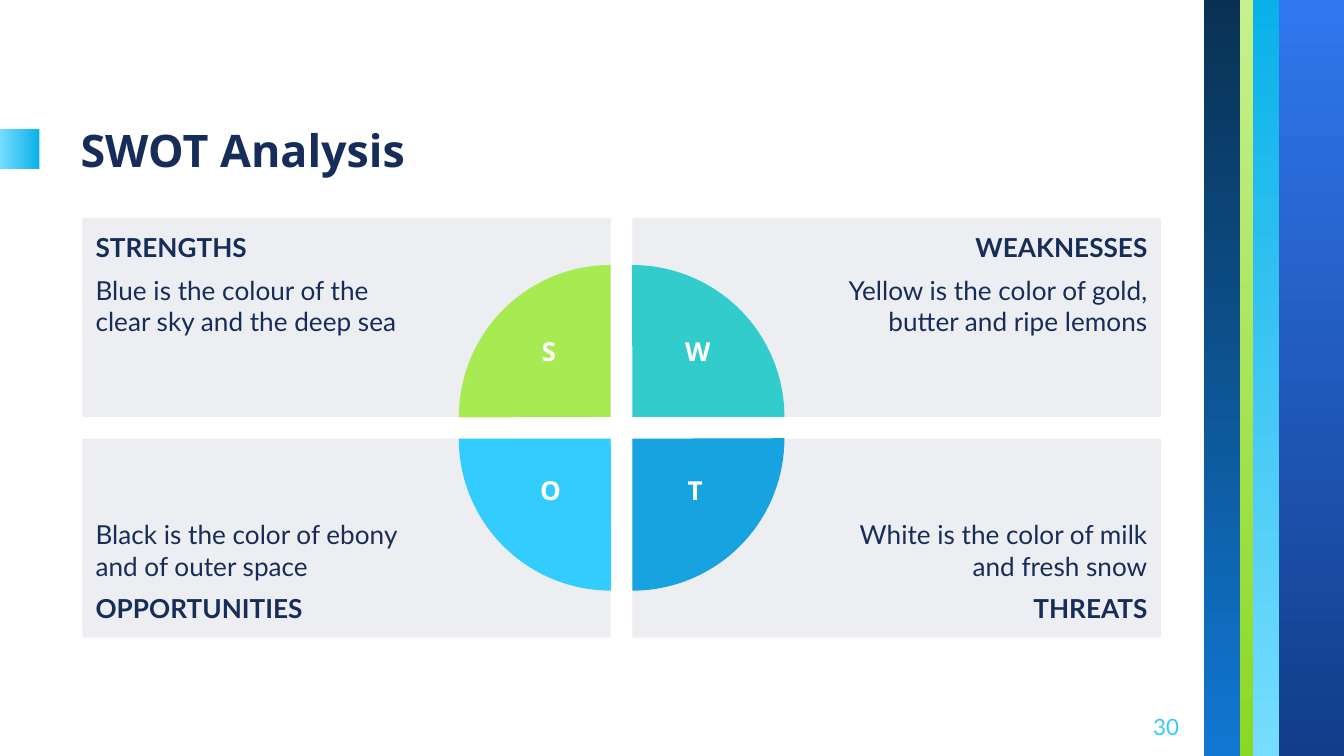
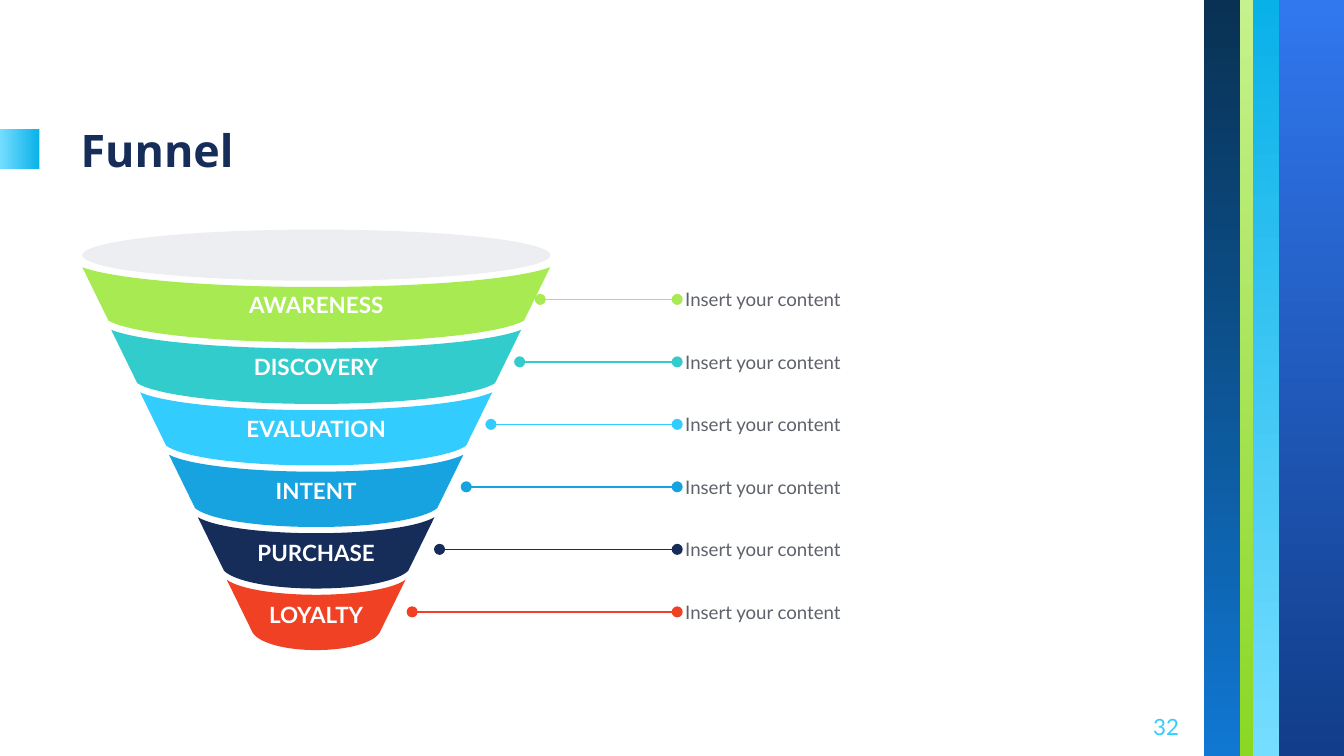
from dataclasses import dataclass
from typing import Any

from lxml.etree import SubElement
from pptx import Presentation
from pptx.dml.color import RGBColor
from pptx.enum.shapes import MSO_CONNECTOR, MSO_SHAPE
from pptx.enum.text import MSO_ANCHOR as Anchor, PP_ALIGN as Align
from pptx.oxml.ns import qn
from pptx.util import Pt

NAVY = RGBColor(0x16, 0x2D, 0x5A)
DEEP_BLUE = RGBColor(0x11, 0x3D, 0x8A)
ROYAL = RGBColor(0x31, 0x77, 0xEE)
SKY_DARK = RGBColor(0x09, 0xB1, 0xE9)
SKY_LIGHT = RGBColor(0x75, 0xDD, 0xFF)
LIME_LIGHT = RGBColor(0xC6, 0xF1, 0x8D)
LIME_DARK = RGBColor(0x8A, 0xD8, 0x24)
INK = RGBColor(0x09, 0x31, 0x53)
COBALT = RGBColor(0x10, 0x77, 0xD2)
GREEN = RGBColor(0xA7, 0xEA, 0x52)
TEAL = RGBColor(0x33, 0xCC, 0xCC)
CYAN = RGBColor(0x33, 0xCC, 0xFF)
BLUE = RGBColor(0x16, 0xA3, 0xE0)
RED = RGBColor(0xF1, 0x41, 0x24)
PALE = RGBColor(0xED, 0xEE, 0xF1)
GREY = RGBColor(0x5E, 0x62, 0x6B)
WHITE = RGBColor(0xFF, 0xFF, 0xFF)

Format = dict[str, Any]
TITLE: Format = {"name": "Noto Sans", "size": Pt(24), "bold": True, "rgb": NAVY}
PAGE: Format = {"name": "Lato", "size": Pt(12), "bold": False, "rgb": CYAN}
BODY: Format = {"name": "Lato", "size": Pt(14), "bold": False, "rgb": NAVY}
HEADING: Format = BODY | {"bold": True}
LETTER: Format = {"name": "Noto Sans", "size": Pt(14), "bold": True, "rgb": WHITE}
STAGE: Format = {"name": "Lato", "size": Pt(12), "bold": True, "rgb": WHITE}
NOTE: Format = {"name": "Lato", "size": Pt(10), "bold": False, "rgb": GREY}

WIDTH, HEIGHT = 720, 405


@dataclass(frozen=True)
class Band:
    left: float
    top: float
    width: float
    height: float
    start: RGBColor
    end: RGBColor
    angle: int = 270


@dataclass(frozen=True)
class Quadrant:
    heading: str
    body: str
    color: RGBColor
    col: int
    row: int
    turn: int
    letter_x: float


@dataclass(frozen=True)
class Stage:
    name: str
    color: RGBColor
    line_start: float


BANDS = [
    Band(684.9, 0, 35.1, HEIGHT, ROYAL, DEEP_BLUE),
    Band(671.1, 0, 14, HEIGHT, SKY_DARK, SKY_LIGHT),
    Band(664.3, 0, 7, HEIGHT, LIME_LIGHT, LIME_DARK),
    Band(645, 0, 19.3, HEIGHT, INK, COBALT),
    Band(0, 69.2, 21.2, 21.2, SKY_LIGHT, SKY_DARK, 0),
]

QUADRANTS = [
    Quadrant("STRENGTHS", "Blue is the colour of the clear sky and the deep sea",
             GREEN, 0, 0, 0, 294.1),
    Quadrant("WEAKNESSES", "Yellow is the color of gold, butter and ripe lemons",
             TEAL, 1, 0, 90, 373.8),
    Quadrant("OPPORTUNITIES", "Black is the color of ebony and of outer space",
             CYAN, 0, 1, 270, 295),
    Quadrant("THREATS", "White is the color of milk and fresh snow",
             BLUE, 1, 1, 180, 372.5),
]
CARD_LEFT, CARD_TOP = 44.1, 116.8
CARD_W, CARD_H, CARD_GAP = 283.1, 106.6, 11.6
PIE_RADIUS = 81.4
LETTER_TOPS = (176.2, 250.8)

STAGES = [
    Stage("AWARENESS", GREEN, 289.4),
    Stage("DISCOVERY", TEAL, 278.4),
    Stage("EVALUATION", CYAN, 263),
    Stage("INTENT", BLUE, 249.8),
    Stage("PURCHASE", NAVY, 235.5),
    Stage("LOYALTY", RED, 220.8),
]
FUNNEL_X, FUNNEL_TOP, FUNNEL_STEP = 169.4, 143.2, 33.48
RIM_TOP, RIM_H, RIM_HALF = 123, 27.4, 125.3
LINE_TOP, LINE_END, NOTE_LEFT = 160.4, 362.8, 367.1
# Bezier control points of half an edge, as shares of its half width and depth.
TOP_EDGE = ((0.85, 0.65), (0.42, 1))
BOTTOM_EDGE = ((0.9, 0.55), (0.52, 1))
# First segment of each curve in a stage outline.
CURVE_STARTS = (0, 3, 7, 10)

Point = tuple[float, float]


def set_all(target: Any, values: Format) -> None:
    for name, value in values.items():
        setattr(target, name, value)


def set_frame(tf: Any, anchor: Anchor, left: float, top: float,
              right: float, bottom: float) -> None:
    set_all(tf, {
        "word_wrap": True, "vertical_anchor": anchor,
        "margin_left": Pt(left), "margin_top": Pt(top),
        "margin_right": Pt(right), "margin_bottom": Pt(bottom),
    })


def write(p: Any, text: str, fmt: Format, align: Align = Align.LEFT) -> None:
    p.alignment = align
    r = p.add_run()
    r.text = text
    set_all(r.font, {k: v for k, v in fmt.items() if k != "rgb"})
    r.font.color.rgb = fmt["rgb"]


def paint(sp: Any, color: RGBColor) -> None:
    sp.shadow.inherit = False
    sp.fill.solid()
    sp.fill.fore_color.rgb = color
    sp.line.fill.background()


def add_shape(s: Any, kind: MSO_SHAPE, left: float, top: float, width: float,
              height: float, color: RGBColor) -> Any:
    sp = s.shapes.add_shape(kind, Pt(left), Pt(top), Pt(width), Pt(height))
    paint(sp, color)
    return sp


def add_text(s: Any, text: str, fmt: Format, left: float, top: float,
             width: float, height: float, align: Align = Align.LEFT,
             anchor: Anchor = Anchor.MIDDLE, inset: float = 7.2) -> None:
    tf = s.shapes.add_textbox(Pt(left), Pt(top), Pt(width), Pt(height)).text_frame
    set_frame(tf, anchor, inset, inset, inset, inset)
    write(tf.paragraphs[0], text, fmt, align)


def add_band(s: Any, band: Band) -> None:
    sp = add_shape(s, MSO_SHAPE.RECTANGLE, band.left, band.top,
                   band.width, band.height, band.start)
    sp.fill.gradient()
    sp.fill.gradient_angle = band.angle
    for stop, color in zip(sp.fill.gradient_stops, (band.start, band.end)):
        stop.color.rgb = color


def add_base_slide(prs: Any, title: str, number: str) -> Any:
    """Add a blank slide with the bands, the title and the page number."""
    s = prs.slides.add_slide(prs.slide_layouts[6])
    for band in BANDS:
        add_band(s, band)
    add_text(s, title, TITLE, 36.1, 44.4, 417.6, 57.4, anchor=Anchor.BOTTOM)
    add_text(s, number, PAGE, 595.6, 374, 43.2, 31, Align.RIGHT)
    return s


def add_card(s: Any, q: Quadrant) -> None:
    left = CARD_LEFT + q.col * (CARD_W + CARD_GAP)
    top = CARD_TOP + q.row * (CARD_H + CARD_GAP)
    sp = add_shape(s, MSO_SHAPE.RECTANGLE, left, top, CARD_W, CARD_H, PALE)
    tf = sp.text_frame
    margins = (108, 7.2) if q.col else (7.2, 108)
    set_frame(tf, Anchor.BOTTOM if q.row else Anchor.TOP,
              margins[0], 7.2, margins[1], 7.2)
    lines = [(q.heading, HEADING), (q.body, BODY)]
    if q.row:
        lines.reverse()
    align = Align.RIGHT if q.col else Align.LEFT
    first, last = tf.paragraphs[0], tf.add_paragraph()
    for p, (text, fmt) in zip((first, last), lines):
        write(p, text, fmt, align)
    last.space_before = last.space_after = Pt(6)


def add_pie(s: Any, q: Quadrant) -> None:
    """Add a quarter disc centred on the inner corner of its card."""
    x = CARD_LEFT + CARD_W + q.col * CARD_GAP
    y = CARD_TOP + CARD_H + q.row * CARD_GAP
    sp = add_shape(s, MSO_SHAPE.PIE, x - PIE_RADIUS, y - PIE_RADIUS,
                   2 * PIE_RADIUS, 2 * PIE_RADIUS, q.color)
    sp.adjustments[0], sp.adjustments[1] = 107.89, 162
    sp.rotation = q.turn


def build_swot(prs: Any) -> None:
    s = add_base_slide(prs, "SWOT Analysis", "30")
    for q in QUADRANTS:
        add_card(s, q)
    for q in QUADRANTS:
        add_pie(s, q)
    for q in QUADRANTS:
        add_text(s, q.heading[0], LETTER, q.letter_x - 21, LETTER_TOPS[q.row],
                 42, 30, Align.CENTER, Anchor.TOP, 3.6)


def edge(half: float, top: float, depth: float,
         controls: tuple[Point, Point]) -> list[Point]:
    """Return the Bezier points of a sagging edge, from left to right."""
    shares = [(1, 0), *controls, (0, 1)]
    left = [(FUNNEL_X - half * x, top + depth * y) for x, y in shares]
    return left + [(2 * FUNNEL_X - x, y) for x, y in left[-2::-1]]


def bend(sp: Any) -> None:
    """Join each curve's three line segments into one cubic Bezier."""
    outline = next(sp._element.iter(qn("a:path")))
    lines = outline.findall(qn("a:lnTo"))
    for start in CURVE_STARTS:
        curve, *rest = lines[start:start + 3]
        curve.tag = qn("a:cubicBezTo")
        for line in rest:
            curve.append(line[0])
            outline.remove(line)


def add_stage(s: Any, i: int, stage: Stage) -> None:
    top = FUNNEL_TOP + i * FUNNEL_STEP
    half = RIM_HALF - 15.48 * i
    depth, side = 40.2 - 0.5 * i, 28.6
    points = edge(half, top, 10.6 - 0.5 * i, TOP_EDGE)
    points += reversed(edge(half - 14, top + side, depth - side, BOTTOM_EDGE))
    outline = [(Pt(x), Pt(y)) for x, y in points]
    builder = s.shapes.build_freeform(*outline[0])
    builder.add_line_segments(outline[1:], close=True)
    sp = builder.convert_to_shape()
    bend(sp)
    paint(sp, stage.color)
    set_frame(sp.text_frame, Anchor.MIDDLE, 5, 3, 5, 3)
    write(sp.text_frame.paragraphs[0], stage.name, STAGE, Align.CENTER)


def add_callout(s: Any, i: int, stage: Stage) -> None:
    y = LINE_TOP + i * FUNNEL_STEP
    line = s.shapes.add_connector(MSO_CONNECTOR.STRAIGHT, Pt(stage.line_start),
                                  Pt(y), Pt(LINE_END), Pt(y))
    line.line.color.rgb = stage.color
    line.line.width = Pt(0.75)
    props = line._element.spPr
    for end in ("a:headEnd", "a:tailEnd"):
        SubElement(props.find(qn("a:ln")), qn(end), type="oval")
    SubElement(props, qn("a:effectLst"))
    add_text(s, "Insert your content", NOTE, NOTE_LEFT, y - 12, 193.7, 24, inset=0)


def build_funnel(prs: Any) -> None:
    s = add_base_slide(prs, "Funnel", "32")
    for i, stage in enumerate(STAGES):
        add_stage(s, i, stage)
    add_shape(s, MSO_SHAPE.OVAL, FUNNEL_X - RIM_HALF, RIM_TOP,
              2 * RIM_HALF, RIM_H, PALE)
    for i, stage in enumerate(STAGES):
        add_callout(s, i, stage)


def main() -> None:
    prs = Presentation()
    prs.slide_width, prs.slide_height = Pt(WIDTH), Pt(HEIGHT)
    build_swot(prs)
    build_funnel(prs)
    prs.save("out.pptx")


if __name__ == "__main__":
    main()
